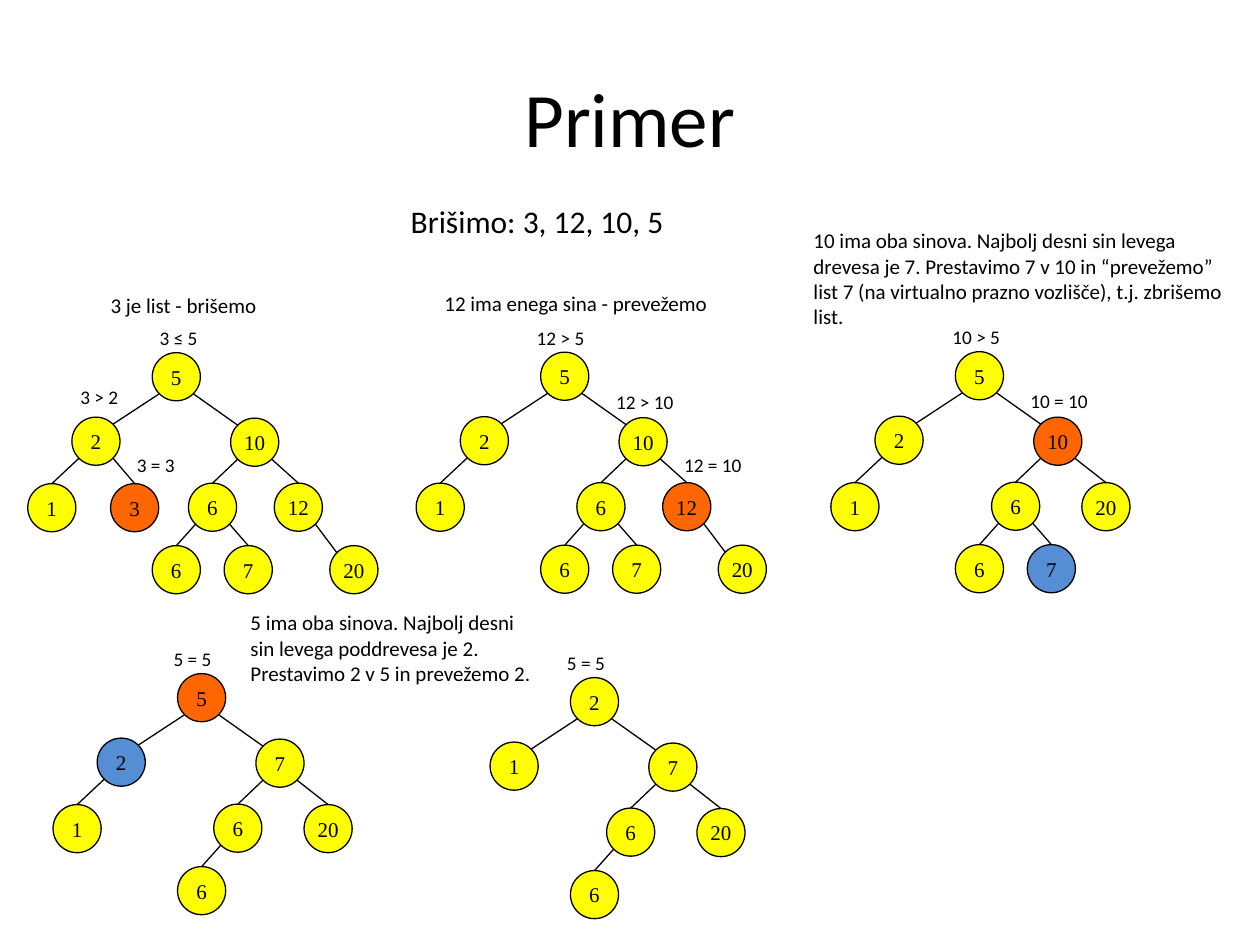
from lxml.etree import SubElement
from pptx import Presentation
from pptx.dml.color import RGBColor
from pptx.enum.shapes import MSO_CONNECTOR, MSO_SHAPE
from pptx.enum.text import MSO_ANCHOR, MSO_AUTO_SIZE, PP_ALIGN
from pptx.oxml.ns import qn
from pptx.util import Cm, Pt

COLOURS = {
    "ink": "000000",
    "plain": "FFFF00",
    "deleted": "FF6600",
    "replacement": "558ED5",
}
DIAMETER = 0.97
CORNER = DIAMETER / 2 * 0.71

SLOTS = {
    "": (0, 0),
    "L": (-1.62, 1.3),
    "R": (1.58, 1.32),
    "LL": (-2.51, 2.64),
    "LR": (-0.84, 2.64),
    "RL": (0.73, 2.63),
    "RR": (2.46, 2.63),
    "RLL": (0, 3.89),
    "RLR": (1.45, 3.89),
    "RRR": (3.58, 3.89),
}
SHALLOW_SLOTS = SLOTS | {"RR": (2.55, 2.64)}

TREES = [
    (3.07, 7.11, SLOTS,
     {"": 5, "L": 2, "R": 10, "LL": 1, "LR": 3, "RL": 6, "RR": 12,
      "RLL": 6, "RLR": 7, "RRR": 20},
     {"LR": "deleted"}),
    (10.9, 7.1, SLOTS,
     {"": 5, "L": 2, "R": 10, "LL": 1, "RL": 6, "RR": 12,
      "RLL": 6, "RLR": 7, "RRR": 20},
     {"RR": "deleted"}),
    (19.26, 7.09, SHALLOW_SLOTS,
     {"": 5, "L": 2, "R": 10, "LL": 1, "RL": 6, "RR": 20,
      "RLL": 6, "RLR": 7},
     {"R": "deleted", "RLR": "replacement"}),
    (3.58, 13.58, SHALLOW_SLOTS,
     {"": 5, "L": 2, "R": 7, "LL": 1, "RL": 6, "RR": 20, "RLL": 6},
     {"": "deleted", "L": "replacement"}),
    (11.5, 13.66, SHALLOW_SLOTS,
     {"": 2, "L": 1, "R": 7, "RL": 6, "RR": 20, "RLL": 6},
     {}),
]

COMPARISONS = [
    ("3 ≤ 5", 2.97, 6.45),
    ("3 > 2", 1.37, 7.65),
    ("3 = 3", 2.51, 9.02),
    ("12 > 5", 10.57, 6.45),
    ("12 > 10", 12.17, 7.75),
    ("12 = 10", 13.54, 9.02),
    ("10 > 5", 18.95, 6.43),
    ("10 = 10", 20.52, 7.72),
    ("5 = 5", 3.25, 12.93),
    ("5 = 5", 11.18, 13),
]

NOTES = [
    ("3 je list - brišemo", 1.98, 5.77, 6.15, 0.76),
    ("12 ima enega sina - prevežemo", 8.71, 5.74, 6.15, 0.76),
    ("10 ima oba sinova. Najbolj desni sin levega drevesa je 7. "
     "Prestavimo 7 v 10 in “prevežemo” list 7 (na virtualno prazno "
     "vozlišče), t.j. zbrišemo list.", 16.15, 4.47, 8.92, 2.31),
    ("5 ima oba sinova. Najbolj desni sin levega poddrevesa je 2. "
     "Prestavimo 2 v 5 in prevežemo 2.", 4.8, 12.17, 6.15, 2.31),
]


class TreeSlide:
    text_font = "Calibri"
    node_font = "Times New Roman"
    line_width = Pt(0.75)

    def __init__(self, slide):
        self.slide = slide

    def colour(self, name):
        return RGBColor.from_string(COLOURS[name])

    def fill_text(self, text_frame, text, size, font_name):
        text_frame.text = text
        font = text_frame.paragraphs[0].runs[0].font
        font.size = Pt(size)
        font.name = font_name
        font.color.rgb = self.colour("ink")

    def text(self, text, left, top, width, height, size):
        shape = self.slide.shapes.add_textbox(
            Cm(left), Cm(top), Cm(width), Cm(height))
        text_frame = shape.text_frame
        text_frame.word_wrap = True
        text_frame.auto_size = MSO_AUTO_SIZE.SHAPE_TO_FIT_TEXT
        self.fill_text(text_frame, text, size, self.text_font)

    def title(self, text):
        shape = self.slide.shapes.add_textbox(
            Cm(1.27), Cm(0.76), Cm(22.86), Cm(3.18))
        text_frame = shape.text_frame
        text_frame.word_wrap = True
        text_frame.vertical_anchor = MSO_ANCHOR.MIDDLE
        self.fill_text(text_frame, text, 44, self.text_font)
        text_frame.paragraphs[0].alignment = PP_ALIGN.CENTER

    def node(self, value, left, top, fill):
        shape = self.slide.shapes.add_shape(
            MSO_SHAPE.OVAL, Cm(left), Cm(top), Cm(DIAMETER), Cm(DIAMETER))
        shape.shadow.inherit = False
        shape.fill.solid()
        shape.fill.fore_color.rgb = self.colour(fill)
        shape.line.color.rgb = self.colour("ink")
        shape.line.width = self.line_width
        text_frame = shape.text_frame
        text_frame.word_wrap = False
        text_frame.vertical_anchor = MSO_ANCHOR.MIDDLE
        self.fill_text(text_frame, str(value), 12, self.node_font)
        text_frame.paragraphs[0].alignment = PP_ALIGN.CENTER

    def edge(self, start, end):
        connector = self.slide.shapes.add_connector(
            MSO_CONNECTOR.STRAIGHT,
            *(Cm(length) for length in (*start, *end)))
        connector.line.color.rgb = self.colour("ink")
        connector.line.width = self.line_width
        SubElement(connector._element.spPr, qn("a:effectLst"))

    def tree(self, left, top, slots, values, marks):
        centres = {}
        for slot, value in values.items():
            x, y = left + slots[slot][0], top + slots[slot][1]
            centres[slot] = (x + DIAMETER / 2, y + DIAMETER / 2)
            self.node(value, x, y, marks.get(slot, "plain"))
            if slot:
                side = CORNER if slot[-1] == "R" else -CORNER
                parent_x, parent_y = centres[slot[:-1]]
                child_x, child_y = centres[slot]
                if slot in ("L", "R", "RRR"):
                    end = (child_x - side, child_y - CORNER)
                else:
                    end = (child_x, y)
                self.edge((parent_x + side, parent_y + CORNER), end)


def main():
    presentation = Presentation()
    presentation.slide_width = Cm(25.4)
    presentation.slide_height = Cm(19.05)
    slide = presentation.slides.add_slide(presentation.slide_layouts[6])
    tree_slide = TreeSlide(slide)
    tree_slide.title("Primer")
    tree_slide.text("Brišimo: 3, 12, 10, 5", 8.03, 3.94, 6.15, 1.02, 18)
    for tree in TREES:
        tree_slide.tree(*tree)
    for text, left, top in COMPARISONS:
        tree_slide.text(text, left, top, 2, 0.73, 11)
    for note in NOTES:
        tree_slide.text(*note, 12)
    presentation.save("out.pptx")


if __name__ == "__main__":
    main()
